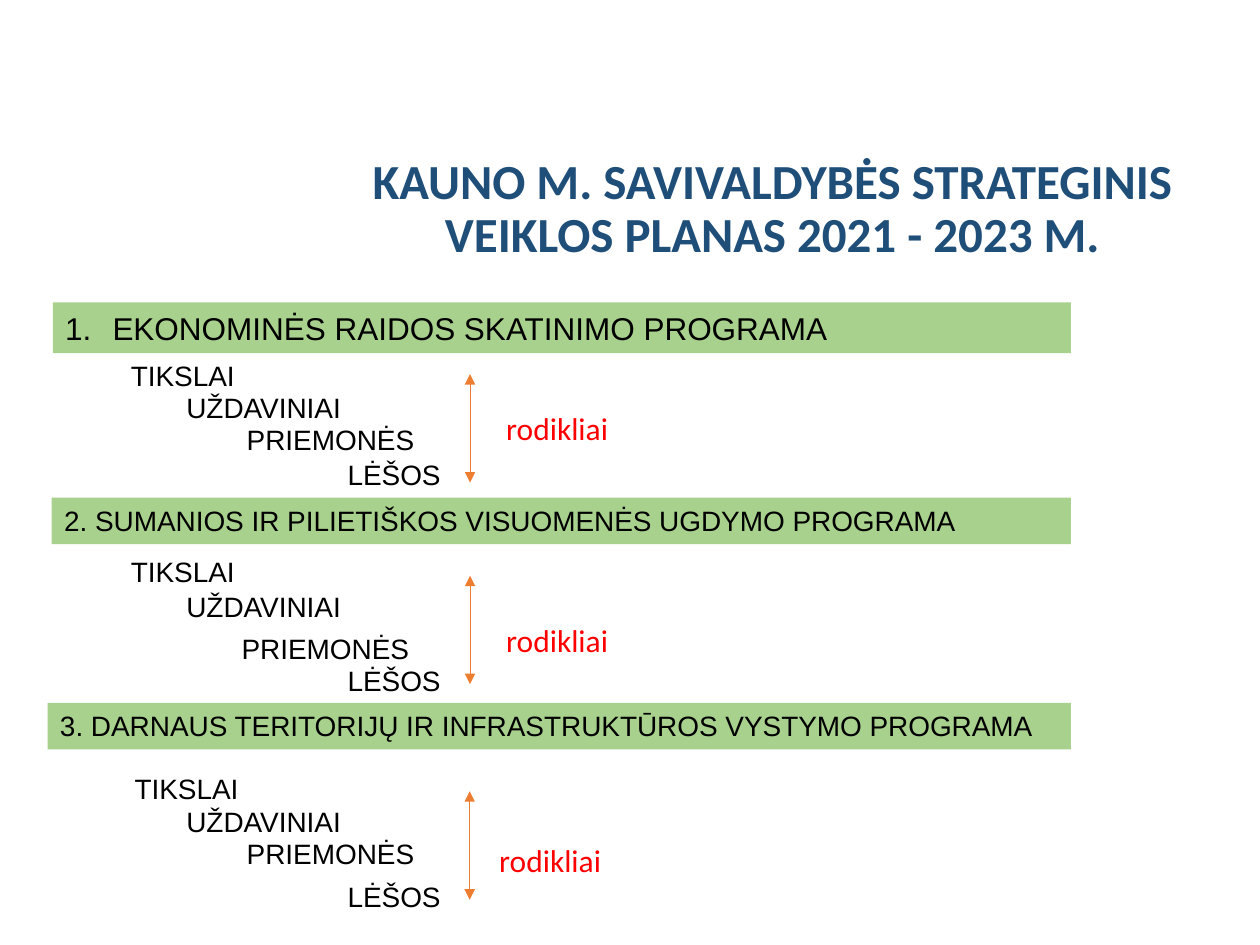
from lxml import etree
from pptx import Presentation
from pptx.dml.color import RGBColor
from pptx.enum.shapes import MSO_CONNECTOR, MSO_SHAPE
from pptx.enum.text import MSO_ANCHOR, MSO_AUTO_SIZE, PP_ALIGN
from pptx.oxml.ns import qn
from pptx.util import Pt

NAVY = RGBColor(0x1F, 0x4E, 0x79)
GREEN = RGBColor(0xA9, 0xD1, 0x8E)
ORANGE = RGBColor(0xED, 0x7D, 0x31)
RED = RGBColor(0xFF, 0, 0)
BLACK = RGBColor(0, 0, 0)
RECT = MSO_SHAPE.RECTANGLE
LINE = MSO_CONNECTOR.STRAIGHT
LEFT, CENTER = PP_ALIGN.LEFT, PP_ALIGN.CENTER
TOP, MIDDLE = MSO_ANCHOR.TOP, MSO_ANCHOR.MIDDLE
NONE, GROW = MSO_AUTO_SIZE.NONE, MSO_AUTO_SIZE.SHAPE_TO_FIT_TEXT

RIGHT = 612     # right edge of the green bars
SPAN = 61.9     # arrow length
WORDS = ["TIKSLAI", "UŽDAVINIAI", "PRIEMONĖS", "LĖŠOS"]

# Bar (text, size, numbered, left, top, height), step places, label, arrow
PARTS = [
    (("EKONOMINĖS RAIDOS SKATINIMO PROGRAMA", 18, True, 30.2, 172.8, 29),
     [(67.7, 201.6), (99.4, 219.8), (133.9, 237.8), (191.5, 257.8)],
     (282.2, 230.4), (268.6, 213.8)),
    (("2. SUMANIOS IR PILIETIŠKOS VISUOMENĖS UGDYMO PROGRAMA",
      16, False, 29.5, 284.4, 26.6),
     [(67.7, 313.2), (99.4, 333.6), (131, 357.1), (191.5, 375.8)],
     (282.2, 351.4), (268.6, 329)),
    (("3. DARNAUS TERITORIJŲ IR INFRASTRUKTŪROS VYSTYMO PROGRAMA",
      16, False, 27.2, 401.6, 26.6),
     [(69.8, 437.2), (99.4, 456.2), (133.9, 474.5), (191.5, 499)],
     (278.2, 477.2), (268.4, 452.2)),
]


def write(shape, text, size, font, color, fit=GROW, anchor=TOP, align=LEFT):
    frame = shape.text_frame
    frame.word_wrap = True
    frame.auto_size = fit
    frame.vertical_anchor = anchor
    para = frame.paragraphs[0]
    para.alignment = align
    run = para.add_run()
    run.text = text
    run.font.size = Pt(size)
    run.font.name = font
    run.font.color.rgb = color
    return para


def label(spot, width, height, text, size, font, color):
    box = slide.shapes.add_textbox(*map(Pt, (*spot, width, height)))
    write(box, text, size, font, color)


deck = Presentation()
deck.slide_width, deck.slide_height = Pt(720), Pt(540)
slide = deck.slides.add_slide(deck.slide_layouts[5])

# Title
title = slide.shapes.title
title.left, title.top, title.width, title.height = map(
    Pt, (177.8, 74.9, 527, 90.7))
para = write(title, "KAUNO M. SAVIVALDYBĖS STRATEGINIS VEIKLOS PLANAS 2021 - 2023 M.",
             28, "Calibri", NAVY, NONE, MIDDLE, CENTER)
para.line_spacing = 0.9
para.runs[0].font.bold = True

for (text, size, auto, left, top, height), steps, note, (x, y) in PARTS:
    # Program bar
    bar = slide.shapes.add_shape(
        RECT, *map(Pt, (left, top, RIGHT - left, height)))
    bar.shadow.inherit = False
    bar.fill.solid()
    bar.fill.fore_color.rgb = GREEN
    bar.line.fill.background()
    para = write(bar, text, size, "Arial", BLACK)
    if auto:
        props = para._p.get_or_add_pPr()
        props.set("marL", str(Pt(27)))
        props.set("indent", str(-Pt(27)))
        etree.SubElement(props, qn("a:buFont"), typeface="+mj-lt")
        etree.SubElement(props, qn("a:buAutoNum"), type="arabicPeriod")

    # Steps from goals to funds
    for word, spot in zip(WORDS, steps):
        label(spot, 339, 26.6, word, 16, "Arial", BLACK)

    # Indicator label and double arrow
    label(note, 77.8, 29, "rodikliai", 18, "Calibri", RED)
    arrow = slide.shapes.add_connector(LINE, *map(Pt, (x, y, x, y + SPAN)))
    arrow.line.color.rgb = ORANGE
    arrow.line.width = Pt(0.5)
    stroke = arrow.line._get_or_add_ln()
    for end in ("a:headEnd", "a:tailEnd"):
        etree.SubElement(stroke, qn(end), type="triangle")
    etree.SubElement(arrow._element.spPr, qn("a:effectLst"))

deck.save("out.pptx")
